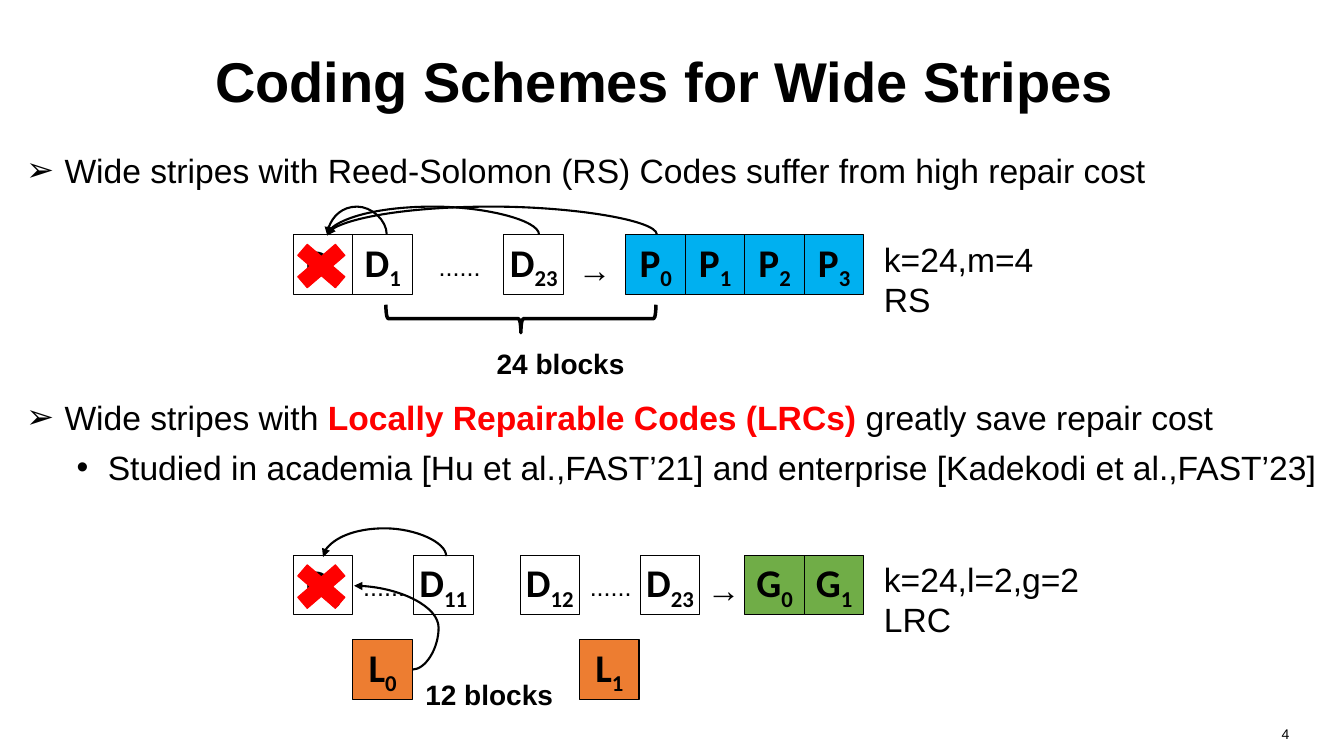
from dataclasses import dataclass

from lxml import etree
from pptx import Presentation
from pptx.dml.color import RGBColor
from pptx.enum.shapes import MSO_CONNECTOR, MSO_SHAPE
from pptx.enum.text import MSO_ANCHOR, MSO_AUTO_SIZE, PP_ALIGN
from pptx.oxml.ns import qn
from pptx.util import Inches, Length, Pt

RECTANGLE, CROSS, BRACE = MSO_SHAPE.RECTANGLE, MSO_SHAPE.MATH_MULTIPLY, MSO_SHAPE.LEFT_BRACE
CURVE = MSO_CONNECTOR.CURVE
LEFT, CENTER, RIGHT = PP_ALIGN.LEFT, PP_ALIGN.CENTER, PP_ALIGN.RIGHT
MIDDLE, TOP = MSO_ANCHOR.MIDDLE, MSO_ANCHOR.TOP
FIXED = MSO_AUTO_SIZE.NONE

COLORS = {
    "ink": "000000", "failure": "FF0000", "parity": "00B0F0",
    "global": "70AD47", "local": "ED7D31",
}
WIDTH, HEIGHT = 13.33, 7.5
CELL, GRID_LEFT, GRID_TOP = 0.59, 2.91, 2.33
RS_ROW, LRC_ROW, LOCAL_ROW = 0, 5.39, 6.81
ARC_DEPTH, ARC_RISE = 0.01, 0.28


@dataclass
class Block:
    letter: str
    index: str
    column: float
    row: float
    fill: str = ""


@dataclass
class Label:
    text: str
    column: float
    row: float
    columns: float
    rows: float
    size: int
    align: PP_ALIGN = CENTER
    bold: bool = False


@dataclass
class Arc:
    start: float
    end: float
    row: float


@dataclass
class Bullet:
    spans: list[tuple[str, bool]]
    level: int
    mark: str
    margin: float
    hanging: float
    before: float


BLOCKS = [
    Block("D", "0", 0, RS_ROW),
    Block("D", "1", 1, RS_ROW),
    Block("D", "23", 3.54, RS_ROW),
    *[Block("P", str(i), 5.59 + i, RS_ROW, "parity") for i in range(4)],
    Block("D", "0", 0, LRC_ROW),
    Block("D", "11", 2.02, LRC_ROW),
    Block("D", "12", 3.81, LRC_ROW),
    Block("D", "23", 5.83, LRC_ROW),
    *[Block("G", str(i), 7.59 + i, LRC_ROW, "global") for i in range(2)],
    Block("L", "0", 1, LOCAL_ROW, "local"),
    Block("L", "1", 4.81, LOCAL_ROW, "local"),
]
LABELS = [
    *[Label("......", column, row, 1.05, 0.68, 18)
      for column, row in ((2.27, 0.19), (1, 5.58), (4.81, 5.58))],
    *[Label("→", column, row, 1.05, 0.85, 24) for column, row in ((4.54, 0.15), (6.71, 5.54))],
    Label("24 blocks", 3.25, 1.8, 3.17, 0.75, 20, LEFT, True),
    Label("12 blocks", 2.05, 7.36, 3.17, 0.75, 20, LEFT, True),
    Label("k=24,m=4 RS", 9.76, -0.02, 3.17, 1.54, 24, LEFT),
    Label("k=24,l=2,g=2 LRC", 9.76, 5.36, 3.88, 1.54, 24, LEFT),
    Label("4", 11.64, 8.17, 5.27, 0.59, 10, RIGHT),
]
ARCS = [
    *[Arc(start, 0.56, RS_ROW) for start in (1.56, 4.12, 6.1)],
    Arc(2.56, 0.49, 5.41),
]
BULLETS = [
    Bullet([("Wide stripes with Reed-Solomon (RS) Codes suffer from high repair cost", False)],
           0, "➢", 0.38, 0.38, 0),
    Bullet([("Wide stripes with ", False), ("Locally Repairable Codes (LRCs)", True),
            (" greatly save repair cost", False)], 0, "➢", 0.38, 0.38, 147.5),
    Bullet([("Studied in academia [Hu et al.,FAST’21] and enterprise [Kadekodi et al.,FAST’23]",
             False)], 1, "•", 0.81, 0.31, 6.5),
]


def color(name: str) -> RGBColor:
    return RGBColor.from_string(COLORS[name])


def across(column: float) -> Length:
    return Inches(GRID_LEFT + column * CELL)


def down(row: float) -> Length:
    return Inches(GRID_TOP + row * CELL)


def span_of(cells: float) -> Length:
    return Inches(cells * CELL)


def set_font(font, size: int, bold: bool = False, name: str = "Arial") -> None:
    font.name, font.size, font.bold = name, Pt(size), bold
    font.color.rgb = color("ink")


def place(box, left: float, top: float, width: float, height: float) -> None:
    box.left, box.top = Inches(left * WIDTH), Inches(top * HEIGHT)
    box.width, box.height = Inches(width * WIDTH), Inches(height * HEIGHT)


def add_outline(page, kind: MSO_SHAPE, column: float, row: float, columns: float,
                rows: float, fill: str = "", line: str = "ink", weight: float = 0.75):
    box = page.shapes.add_shape(kind, across(column), down(row), span_of(columns), span_of(rows))
    box.shadow.inherit = False
    if fill:
        box.fill.solid()
        box.fill.fore_color.rgb = color(fill)
    else:
        box.fill.background()
    box.line.color.rgb = color(line)
    box.line.width = Pt(weight)
    return box


def add_block(page, block: Block) -> None:
    box = add_outline(page, RECTANGLE, block.column, block.row, 1, 1, block.fill)
    frame = box.text_frame
    frame.word_wrap, frame.vertical_anchor = False, MIDDLE
    para = frame.paragraphs[0]
    para.alignment = CENTER
    set_font(para.font, 28, True, "Calibri")
    para.add_run().text = block.letter
    subscript = para.add_run()
    subscript.text = block.index
    subscript.font._element.set("baseline", "-25000")


def add_label(page, label: Label) -> None:
    box = page.shapes.add_textbox(across(label.column), down(label.row),
                                  span_of(label.columns), span_of(label.rows))
    box.text_frame.word_wrap = True
    para = box.text_frame.paragraphs[0]
    para.text, para.alignment = label.text, label.align
    set_font(para.font, label.size, label.bold)


def add_curve(page, start: tuple, end: tuple, bend: float, rotation: int = 0) -> None:
    curve = page.shapes.add_connector(CURVE, *start, *end)
    curve.line.color.rgb = color("ink")
    curve.line.width = Pt(1.5)
    properties = curve._element.spPr
    properties.find(qn("a:xfrm")).set("rot", str(rotation * 60000))
    guides = properties.find(qn("a:prstGeom")).get_or_add_avLst()
    etree.SubElement(guides, qn("a:gd"), name="adj1", fmla=f"val {round(bend * 100000)}")
    etree.SubElement(properties.find(qn("a:ln")), qn("a:tailEnd"), type="triangle")
    etree.SubElement(properties, qn("a:effectLst"))


def add_arc(page, arc: Arc) -> None:
    middle = across((arc.start + arc.end) / 2)
    half = span_of((arc.start - arc.end) / 2)
    level = down(arc.row)
    add_curve(page, (middle, level - half), (middle + Inches(ARC_DEPTH), level + half),
              -ARC_RISE / ARC_DEPTH, 90)


def add_bullet(para, bullet: Bullet) -> None:
    para.level, para.space_before = bullet.level, Pt(bullet.before)
    set_font(para.font, 24)
    for text, strong in bullet.spans:
        span = para.add_run()
        span.text = text
        if strong:
            span.font.bold = True
            span.font.color.rgb = color("failure")
    properties = para._p.get_or_add_pPr()
    properties.set("marL", str(Inches(bullet.margin)))
    properties.set("indent", str(-Inches(bullet.hanging)))
    mark = etree.Element(qn("a:buChar"), char=bullet.mark)
    properties.find(qn("a:defRPr")).addprevious(mark)


def main() -> None:
    deck = Presentation()
    deck.slide_width, deck.slide_height = Inches(WIDTH), Inches(HEIGHT)
    page = deck.slides.add_slide(deck.slide_layouts[1])
    title, body = page.placeholders

    place(title, 0.05, 0.023, 0.9, 0.167)
    title.text_frame.text = "Coding Schemes for Wide Stripes "
    title.text_frame.vertical_anchor = MIDDLE
    heading = title.text_frame.paragraphs[0]
    heading.alignment = CENTER
    set_font(heading.font, 40, True)

    place(body, 0.012, 0.192, 0.981, 0.503)
    frame = body.text_frame
    frame.auto_size, frame.vertical_anchor = FIXED, TOP
    for number, bullet in enumerate(BULLETS):
        add_bullet(frame.add_paragraph() if number else frame.paragraphs[0], bullet)

    for label in LABELS:
        add_label(page, label)
    for block in BLOCKS:
        add_block(page, block)
    for row in (RS_ROW, LRC_ROW):
        add_outline(page, CROSS, -0.14, row, 1.22, 1.05, "failure", "failure")
    brace = add_outline(page, BRACE, 3.59, -0.86, 0.47, 4.54, weight=2.5)
    brace.rotation = 270
    for arc in ARCS:
        add_arc(page, arc)
    add_curve(page, (across(2), down(7.31)), (across(1.02), down(5.9)), -0.45)
    deck.save("out.pptx")


if __name__ == "__main__":
    main()
